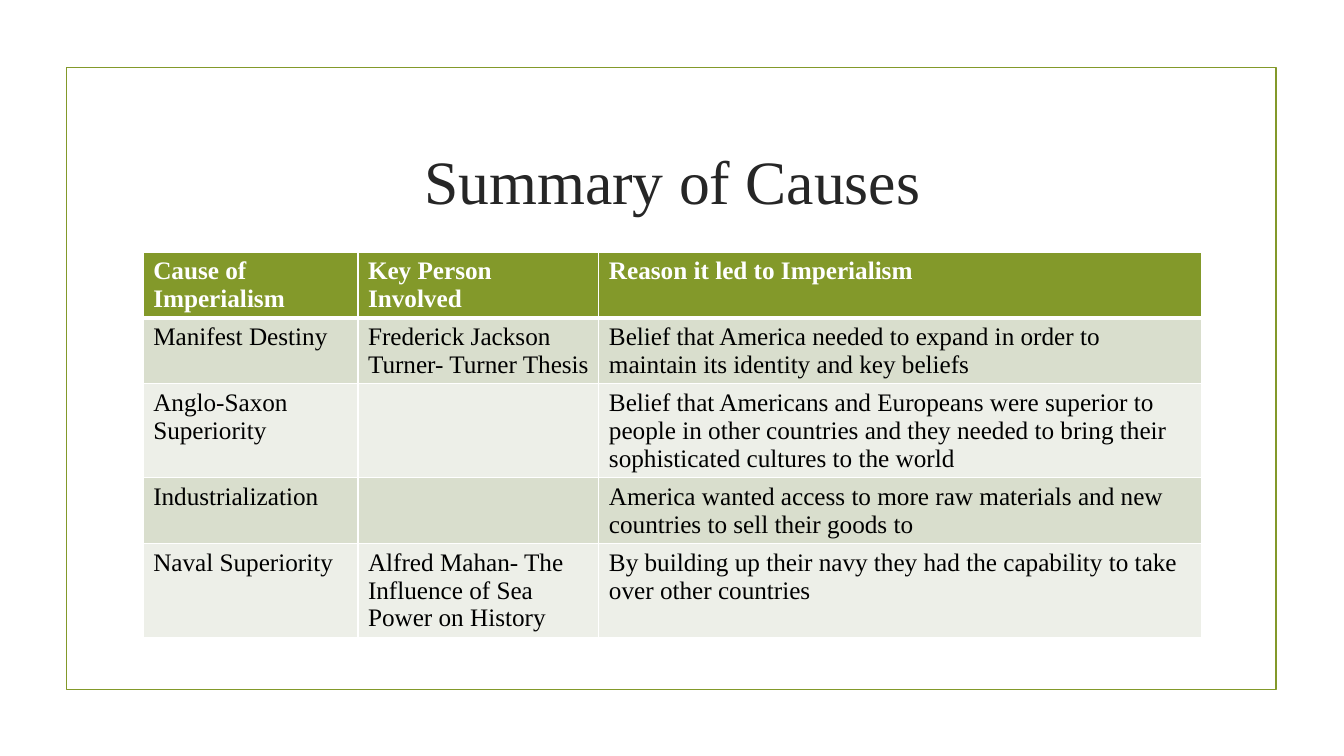
import lxml.etree
import pptx
import pptx.dml.color
import pptx.enum.shapes
import pptx.enum.text
import pptx.oxml.ns
import pptx.util
from dataclasses import dataclass
from pptx.util import Inches

TITLE = "Summary of Causes"
CAUSES = [
    ("Cause of Imperialism", "Key Person Involved", "Reason it led to Imperialism"),
    ("Manifest Destiny", "Frederick Jackson Turner- Turner Thesis",
     "Belief that America needed to expand in order to maintain its identity and key beliefs"),
    ("Anglo-Saxon Superiority", "",
     "Belief that Americans and Europeans were superior to people in other countries "
     "and they needed to bring their sophisticated cultures to the world"),
    ("Industrialization", "",
     "America wanted access to more raw materials and new countries to sell their goods to"),
    ("Naval Superiority", "Alfred Mahan- The Influence of Sea Power on History",
     "By building up their navy they had the capability to take over other countries"),
]
COLUMN_WIDTHS = (2.13, 2.39, 5.98)
ROW_HEIGHT = 0.41
CONTENT_LEFT, CONTENT_WIDTH = 1.42, sum(COLUMN_WIDTHS)


@dataclass(frozen=True)
class Theme:
    font: str = "Times New Roman"
    title_size: float = 44
    cell_size: float = 18
    accent: str = "83992A"
    title: str = "262626"
    header_text: str = "FFFFFF"
    body_text: str = "000000"
    bands: tuple = ("D9DECD", "EDEFE8")
    border: str = "FFFFFF"
    frame_width: float = 1.25
    border_width: float = 1
    header_rule_width: float = 3


THEME = Theme()


def rgb(code):
    return pptx.dml.color.RGBColor.from_string(code)


def format_font(font, color, **values):
    for name, value in {"name": THEME.font, **values}.items():
        setattr(font, name, value)
    font.color.rgb = rgb(color)


def set_borders(cell, top, bottom):
    """Draw the four cell edges; top and bottom are widths in points."""
    properties = cell._tc.get_or_add_tcPr()
    widths = {"lnL": THEME.border_width, "lnR": THEME.border_width, "lnT": top, "lnB": bottom}
    qn = pptx.oxml.ns.qn
    for position, (edge, width) in enumerate(widths.items()):
        line = lxml.etree.Element(qn(f"a:{edge}"), w=str(pptx.util.Pt(width)))
        fill = lxml.etree.SubElement(line, qn("a:solidFill"))
        lxml.etree.SubElement(fill, qn("a:srgbClr"), val=THEME.border)
        properties.insert(position, line)


def add_frame(slide):
    frame = slide.shapes.add_shape(pptx.enum.shapes.MSO_SHAPE.RECTANGLE,
                                   Inches(0.66), Inches(0.67), Inches(12), Inches(6.17))
    frame.shadow.inherit = False
    frame.fill.background()
    frame.line.color.rgb = rgb(THEME.accent)
    frame.line.width = pptx.util.Pt(THEME.frame_width)


def add_title(slide):
    title = slide.shapes.title
    place = {"left": CONTENT_LEFT, "top": 1.07, "width": CONTENT_WIDTH, "height": 1.43}
    for name, value in place.items():
        setattr(title, name, Inches(value))
    title.text_frame.text = TITLE
    title.text_frame.vertical_anchor = pptx.enum.text.MSO_ANCHOR.MIDDLE
    heading = title.text_frame.paragraphs[0]
    heading.alignment = pptx.enum.text.PP_ALIGN.CENTER
    format_font(heading.runs[0].font, THEME.title, size=pptx.util.Pt(THEME.title_size))


def add_causes(slide):
    causes = slide.shapes.add_table(
        len(CAUSES), len(COLUMN_WIDTHS), Inches(CONTENT_LEFT), Inches(2.5),
        Inches(CONTENT_WIDTH), Inches(ROW_HEIGHT * len(CAUSES))).table
    for column, width in zip(causes.columns, COLUMN_WIDTHS):
        column.width = Inches(width)
    for row, texts in enumerate(CAUSES):
        is_header = row == 0
        fill = THEME.accent if is_header else THEME.bands[(row - 1) % 2]
        color = THEME.header_text if is_header else THEME.body_text
        top = THEME.header_rule_width if row == 1 else THEME.border_width
        bottom = THEME.header_rule_width if is_header else THEME.border_width
        for column, text in enumerate(texts):
            cell = causes.cell(row, column)
            cell.text = text
            cell.fill.solid()
            cell.fill.fore_color.rgb = rgb(fill)
            set_borders(cell, top, bottom)
            format_font(cell.text_frame.paragraphs[0].font, color,
                        size=pptx.util.Pt(THEME.cell_size), bold=is_header)


def main():
    deck = pptx.Presentation()
    deck.slide_width, deck.slide_height = Inches(13.33), Inches(7.5)
    slide = deck.slides.add_slide(deck.slide_layouts.get_by_name("Title Only"))
    add_frame(slide)
    add_title(slide)
    add_causes(slide)
    deck.save("out.pptx")


if __name__ == "__main__":
    main()
